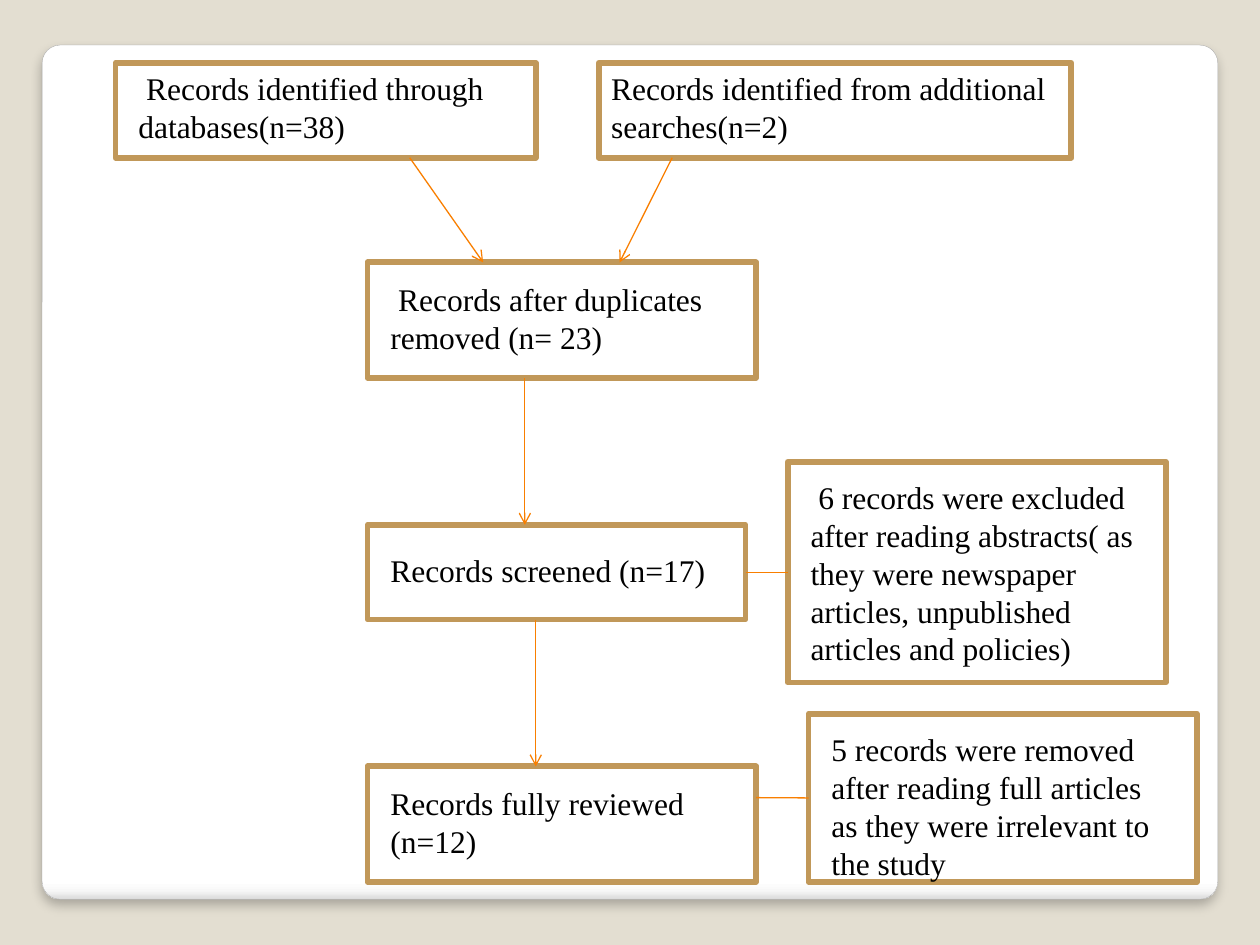
from lxml import etree
from pptx import Presentation
from pptx.dml.color import RGBColor
from pptx.enum.shapes import MSO_CONNECTOR, MSO_SHAPE
from pptx.enum.text import MSO_ANCHOR, PP_ALIGN
from pptx.oxml.ns import qn
from pptx.util import Cm, Pt

RECT, ROUNDED = MSO_SHAPE.RECTANGLE, MSO_SHAPE.ROUNDED_RECTANGLE
STRAIGHT = MSO_CONNECTOR.STRAIGHT
TOP, LEFT = MSO_ANCHOR.TOP, PP_ALIGN.LEFT
LEFT_SIDE, RIGHT_SIDE = 1, 3


def rgb(value):
    """Turn a hex string into a colour."""
    return RGBColor.from_string(value)


def add_xml(parent, tag, **attrs):
    """Append a DrawingML element and return it."""
    return etree.SubElement(parent, qn(tag), {k: str(v) for k, v in attrs.items()})


def write(tf, text, font="Times New Roman", size=18, color="000000", align=LEFT):
    """Write one formatted paragraph into a text frame."""
    p = tf.paragraphs[0]
    p.alignment = align
    r = p.add_run()
    r.text = text
    r.font.name, r.font.size = font, Pt(size)
    r.font.color.rgb = rgb(color)


class FlowChart:
    """Hold the style and the current slide of a flow chart."""

    background, fill = "E3DED1", "FFFFFF"
    border, border_width = "C19859", 3.35
    arrow, arrow_width = "F97F00", 0.75
    panel_line, panel_width = "A4A4A4", 0.16
    panel_stops = ((0, "FFFFFF"), (98, "FFFFFF"), (99, "F7F7F7"), (100, "DADADA"))

    def __init__(self, prs):
        """Add a blank slide with the background colour."""
        self.s = prs.slides.add_slide(prs.slide_layouts[6])
        self.s.background.fill.solid()
        self.s.background.fill.fore_color.rgb = rgb(self.background)

    def shape(self, kind, place, line, width):
        """Add a filled and outlined shape without a shadow."""
        sp = self.s.shapes.add_shape(kind, *map(Cm, place))
        sp.shadow.inherit = False
        sp.fill.solid()
        sp.fill.fore_color.rgb = rgb(self.fill)
        sp.line.color.rgb = rgb(line)
        sp.line.width = Pt(width)
        return sp

    def panel(self, *place):
        """Add the rounded panel with its gradient and soft shadow."""
        sp = self.shape(ROUNDED, place, self.panel_line, self.panel_width)
        sp.adjustments[0] = 0.021
        sp.fill.gradient()
        sp.fill.gradient_angle = 270
        stops = sp.element.spPr.find(".//" + qn("a:gsLst"))
        stops.clear()
        for pos, color in self.panel_stops:
            add_xml(add_xml(stops, "a:gs", pos=pos * 1000), "a:srgbClr", val=color)
        shadow = add_xml(sp.element.spPr.find(qn("a:effectLst")), "a:outerShdw",
                         blurRad=Pt(6), dist=Pt(4), dir=90 * 60000,
                         algn="t", rotWithShape=0)
        add_xml(add_xml(shadow, "a:srgbClr", val="000000"), "a:alpha", val=25000)

    def box(self, text, *place, left=0.46, top=0.13, right=0.46):
        """Add a bordered box with its text."""
        sp = self.shape(RECT, place, self.border, self.border_width)
        tf = sp.text_frame
        tf.word_wrap = True
        tf.vertical_anchor = TOP
        tf.margin_left, tf.margin_top = Cm(left), Cm(top)
        tf.margin_right, tf.margin_bottom = Cm(right), 0
        write(tf, text)
        return sp

    def line(self, x1, y1, x2, y2, head=False):
        """Add a straight connector, with an arrowhead if asked."""
        c = self.s.shapes.add_connector(STRAIGHT, *map(Cm, (x1, y1, x2, y2)))
        c.line.color.rgb = rgb(self.arrow)
        c.line.width = Pt(self.arrow_width)
        if head:
            add_xml(c.line._get_or_add_ln(), "a:tailEnd", type="arrow")
        add_xml(c._element.spPr, "a:effectLst")
        return c


def main():
    """Build the record selection flow chart."""
    prs = Presentation()
    prs.slide_width, prs.slide_height = Cm(25.4), Cm(19.05)
    chart = FlowChart(prs)
    chart.panel(0.85, 0.91, 23.7, 17.22)

    chart.box(" Records identified through databases(n=38)", 2.33, 1.27, 8.47, 1.91)
    chart.box("Records identified from additional searches(n=2)",
              12.07, 1.27, 9.53, 1.91, left=0.25, right=0.25)
    chart.box(" Records after duplicates removed (n= 23)",
              7.41, 5.29, 7.83, 2.33, top=0.36)
    screened = chart.box("Records screened (n=17)", 7.41, 10.58, 7.62, 1.91, top=0.53)
    chart.box("Records fully reviewed (n=12)", 7.41, 15.45, 7.83, 2.33, top=0.36)
    excluded = chart.box(
        " 6 records were excluded after reading abstracts( as they were newspaper "
        "articles, unpublished articles and policies)",
        15.88, 9.31, 7.62, 4.45, top=0.33, right=0.25)
    removed = chart.box(
        "5 records were removed after reading full articles as they were "
        "irrelevant to the study", 16.3, 14.39, 7.83, 3.39, top=0.33)

    for ends in ((8.26, 3.18, 9.74, 5.29), (13.55, 3.18, 12.49, 5.29),
                 (10.58, 7.62, 10.58, 10.58), (10.8, 12.49, 10.8, 15.45)):
        chart.line(*ends, head=True)
    link = chart.line(15.03, 11.54, 15.88, 11.54)
    link.begin_connect(screened, RIGHT_SIDE)
    link.end_connect(excluded, LEFT_SIDE)
    chart.line(15.24, 16.08, 16.3, 16.08).end_connect(removed, LEFT_SIDE)

    prs.save("out.pptx")


if __name__ == "__main__":
    main()
